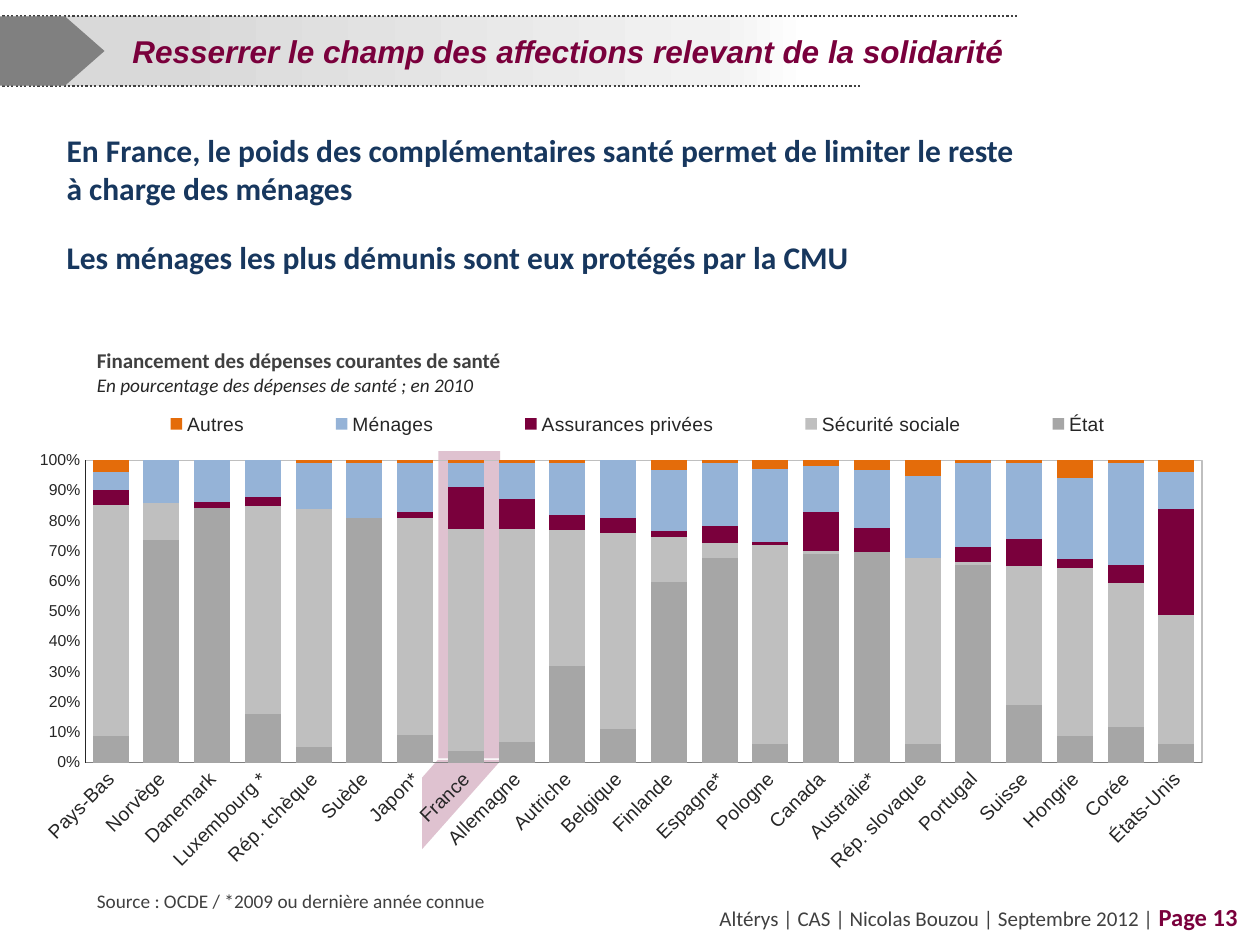
from pptx import Presentation, util as u
from pptx.chart.data import CategoryChartData
from pptx.dml.color import RGBColor
from pptx.enum import chart as ch, dml, shapes, text
from pptx.oxml import parse_xml
from pptx.oxml.ns import nsdecls, qn

COLORS = {
    "plum": "7A003C", "navy": "17375E", "dark": "404040", "ink": "262626",
    "arrow": "808080", "state": "A6A6A6", "social": "BFBFBF",
    "households": "95B3D7", "others": "E46C0A",
}
BANNER_STOPS = [(14, "D9D9D9"), (62, "F2F2F2"), (70, "FFFFFF")]
COUNTRIES = [
    "Pays-Bas", "Norvège", "Danemark", "Luxembourg *", "Rép. tchèque", "Suède",
    "Japon*", "France", "Allemagne", "Autriche", "Belgique", "Finlande",
    "Espagne*", "Pologne", "Canada", "Australie*", "Rép. slovaque", "Portugal",
    "Suisse", "Hongrie", "Corée", "États-Unis",
]
FUNDING = [
    ("État", "state", [9, 73, 85, 16, 5, 81, 9, 4, 7, 32, 11, 59, 69, 6, 69, 69, 6, 66, 19, 9, 12, 6]),
    ("Sécurité sociale", "social",
     [77, 12, 0, 69, 78, 0, 72, 74, 71, 45, 65, 15, 5, 66, 1, 0, 61, 1, 46, 56, 48, 43]),
    ("Assurances privées", "plum", [5, 0, 2, 3, 0, 0, 2, 14, 10, 5, 5, 2, 6, 1, 13, 8, 0, 5, 9, 3, 6, 35]),
    ("Ménages", "households",
     [6, 14, 14, 12, 15, 18, 16, 8, 12, 17, 19, 20, 21, 24, 15, 19, 27, 28, 25, 27, 34, 12]),
    ("Autres", "others", [4, 0, 0, 0, 1, 1, 1, 1, 1, 1, 0, 3, 1, 3, 2, 3, 5, 1, 1, 6, 1, 4]),
]


def rgb(name):
    """Return the palette colour called name."""
    return RGBColor.from_string(COLORS[name])


def style(font, size, color, face="Calibri", bold=False, italic=False):
    """Set the look of a font."""
    font.name, font.size, font.bold, font.italic = face, u.Pt(size), bold, italic
    font.color.rgb = rgb(color)


def add_shape(slide, kind, box, color, alpha=None, adjust=None):
    """Add a flat shape without outline, optionally translucent."""
    shape = slide.shapes.add_shape(kind, *map(u.Inches, box))
    shape.shadow.inherit = False
    shape.fill.solid()
    shape.fill.fore_color.rgb = rgb(color)
    shape.line.fill.background()
    if alpha is not None:
        tint = shape.fill._xPr.find(".//" + qn("a:srgbClr"))
        tint.append(parse_xml(f'<a:alpha {nsdecls("a")} val="{alpha * 1000}"/>'))
    if adjust is not None:
        shape.adjustments[0] = adjust
    return shape


def add_dotted_line(slide, left, right, y):
    """Add a horizontal dotted rule."""
    rule = slide.shapes.add_connector(
        shapes.MSO_CONNECTOR.STRAIGHT, *map(u.Inches, (left, y, right, y)))
    rule.line.color.rgb = rgb("dark")
    rule.line.width = u.Pt(1.25)
    rule.line.dash_style = dml.MSO_LINE.ROUND_DOT
    rule._element.spPr.append(parse_xml(f'<a:effectLst {nsdecls("a")}/>'))


def add_text(slide, box, paragraphs, gap=0):
    """Add a wrapped text box of (wording, style) paragraphs."""
    frame = slide.shapes.add_textbox(*map(u.Inches, box)).text_frame
    frame.word_wrap = True
    for index, (wording, look) in enumerate(paragraphs):
        paragraph = frame.add_paragraph() if index else frame.paragraphs[0]
        paragraph.text = wording
        style(paragraph.font, **look)
        if index:
            paragraph.space_before = u.Pt(gap)


def add_footer(slide):
    """Add the right-aligned footer with its page number."""
    frame = slide.shapes.add_textbox(*map(u.Inches, (2.8, 7.11, 7.12, 0.39))).text_frame
    frame.word_wrap = True
    line = frame.paragraphs[0]
    line.alignment = text.PP_ALIGN.RIGHT
    credit, page = line.add_run(), line.add_run()
    credit.text = "Altérys | CAS | Nicolas Bouzou | Septembre 2012 | "
    style(credit.font, 12, "dark")
    page.text = "Page 13"
    style(page.font, 14, "plum", bold=True)


def add_banner(slide):
    """Add the title banner with its rules and arrow."""
    banner = add_shape(slide, shapes.MSO_SHAPE.RECTANGLE, (0.02, 0.13, 9.15, 0.55), "social")
    banner.fill.gradient()
    banner.fill.gradient_angle = 0
    stops = banner.fill._xPr.find(".//" + qn("a:gsLst"))
    for stop in list(stops):
        stops.remove(stop)
    for position, color in BANNER_STOPS:
        stops.append(parse_xml(
            f'<a:gs {nsdecls("a")} pos="{position * 1000}"><a:srgbClr val="{color}"/></a:gs>'))
    frame = banner.text_frame
    frame.margin_left = u.Inches(1.03)
    frame.vertical_anchor = text.MSO_ANCHOR.MIDDLE
    title = frame.paragraphs[0]
    title.text = "Resserrer le champ des affections relevant de la solidarité"
    title.alignment = text.PP_ALIGN.LEFT
    style(title.font, 18, "plum", "Arial", bold=True, italic=True)
    add_dotted_line(slide, 0.02, 8.09, 0.13)
    add_dotted_line(slide, 0.02, 6.83, 0.68)
    add_shape(slide, shapes.MSO_SHAPE.PENTAGON, (0, 0.13, 0.83, 0.55), "arrow", adjust=0.57)


def layout(x, y, width, height, inner=False):
    """Return a manual chart layout in fractions of the chart."""
    target = '<c:layoutTarget val="inner"/>' if inner else ""
    return parse_xml(
        f'<c:layout {nsdecls("c")}><c:manualLayout>{target}'
        f'<c:xMode val="edge"/><c:yMode val="edge"/><c:x val="{x}"/><c:y val="{y}"/>'
        f'<c:w val="{width}"/><c:h val="{height}"/></c:manualLayout></c:layout>')


def style_axes(chart):
    """Set the scale, lines and labels of both axes."""
    countries, share = chart.category_axis, chart.value_axis
    for axis, size, color in ((countries, 11, "arrow"), (share, 9, "ink")):
        axis.has_major_gridlines = False
        axis.major_tick_mark = axis.minor_tick_mark = ch.XL_TICK_MARK.NONE
        axis.format.line.color.rgb = rgb(color)
        axis.format.line.width = u.Pt(0.75)
        style(axis.tick_labels.font, size, "ink", "Arial")
    countries._element.find(qn("c:txPr")).find(qn("a:bodyPr")).set("rot", "-2700000")
    share.minimum_scale, share.maximum_scale, share.major_unit = 0, 1, 0.1
    share.tick_labels.number_format = "0%"
    share.tick_labels.number_format_is_linked = False


def add_funding_chart(slide):
    """Add the stacked chart of health funding by country."""
    data = CategoryChartData(number_format="0")
    data.categories = COUNTRIES
    for name, _, values in FUNDING:
        data.add_series(name, values)
    chart = slide.shapes.add_chart(
        ch.XL_CHART_TYPE.COLUMN_STACKED_100,
        *map(u.Inches, (0.2, 3.19, 9.53, 3.87)), data).chart
    style(chart.font, 9, "ink", "Arial")
    chart.has_title = False
    chart.has_legend = True
    chart.legend.position = ch.XL_LEGEND_POSITION.RIGHT
    chart.legend.include_in_layout = False
    style(chart.legend.font, 11, "ink", "Arial")
    legend = chart.legend._element
    for old in legend.findall(qn("c:layout")):
        legend.remove(old)
    legend.find(qn("c:legendPos")).addnext(layout(0.05, 0.01, 0.92, 0.07))
    bars = chart.plots[0]
    bars.gap_width, bars.overlap, bars.vary_by_categories = 41, 100, False
    for series, (_, color, _) in zip(bars.series, FUNDING):
        series.format.fill.solid()
        series.format.fill.fore_color.rgb = rgb(color)
    style_axes(chart)
    space = chart._chartSpace
    area = space.chart.plotArea
    for old in area.findall(qn("c:layout")):
        area.remove(old)
    area.insert(0, layout(0.05, 0.12, 0.93, 0.62, inner=True))
    area.append(parse_xml(
        f'<c:spPr {nsdecls("c", "a")}><a:noFill/><a:ln w="9525"><a:solidFill>'
        f'<a:srgbClr val="{COLORS["social"]}"/></a:solidFill></a:ln></c:spPr>'))
    space.chart.addnext(parse_xml(
        f'<c:spPr {nsdecls("c", "a")}><a:noFill/><a:ln><a:noFill/></a:ln></c:spPr>'))


def main():
    """Build the slide and save it."""
    deck = Presentation()
    deck.slide_width, deck.slide_height = u.Inches(10), u.Inches(7.5)
    slide = deck.slides.add_slide(deck.slide_layouts[6])
    add_footer(slide)
    add_shape(slide, shapes.MSO_SHAPE.RECTANGLE, (3.48, 3.58, 0.49, 2.44), "plum", alpha=24)
    add_shape(slide, shapes.MSO_SHAPE.DIAGONAL_STRIPE, (3.35, 6.03, 0.63, 0.71), "plum",
              alpha=24, adjust=0.2)
    add_banner(slide)
    add_text(slide, (0.67, 2.71, 6.46, 0.49), [
        ("Financement des dépenses courantes de santé", dict(size=12, color="dark", bold=True)),
        ("En pourcentage des dépenses de santé ; en 2010", dict(size=11, color="ink", italic=True)),
    ])
    message = dict(size=18, color="navy", bold=True)
    add_text(slide, (0.43, 0.99, 7.72, 0.87), [
        ("En France, le poids des complémentaires santé permet de limiter le reste à charge des ménages",
         message),
        ("Les ménages les plus démunis sont eux protégés par la CMU", message),
    ], gap=18)
    add_text(slide, (0.67, 7.01, 3.94, 0.29), [
        ("Source : OCDE / *2009 ou dernière année connue", dict(size=11, color="dark")),
    ])
    add_funding_chart(slide)
    deck.save("out.pptx")


if __name__ == "__main__":
    main()
